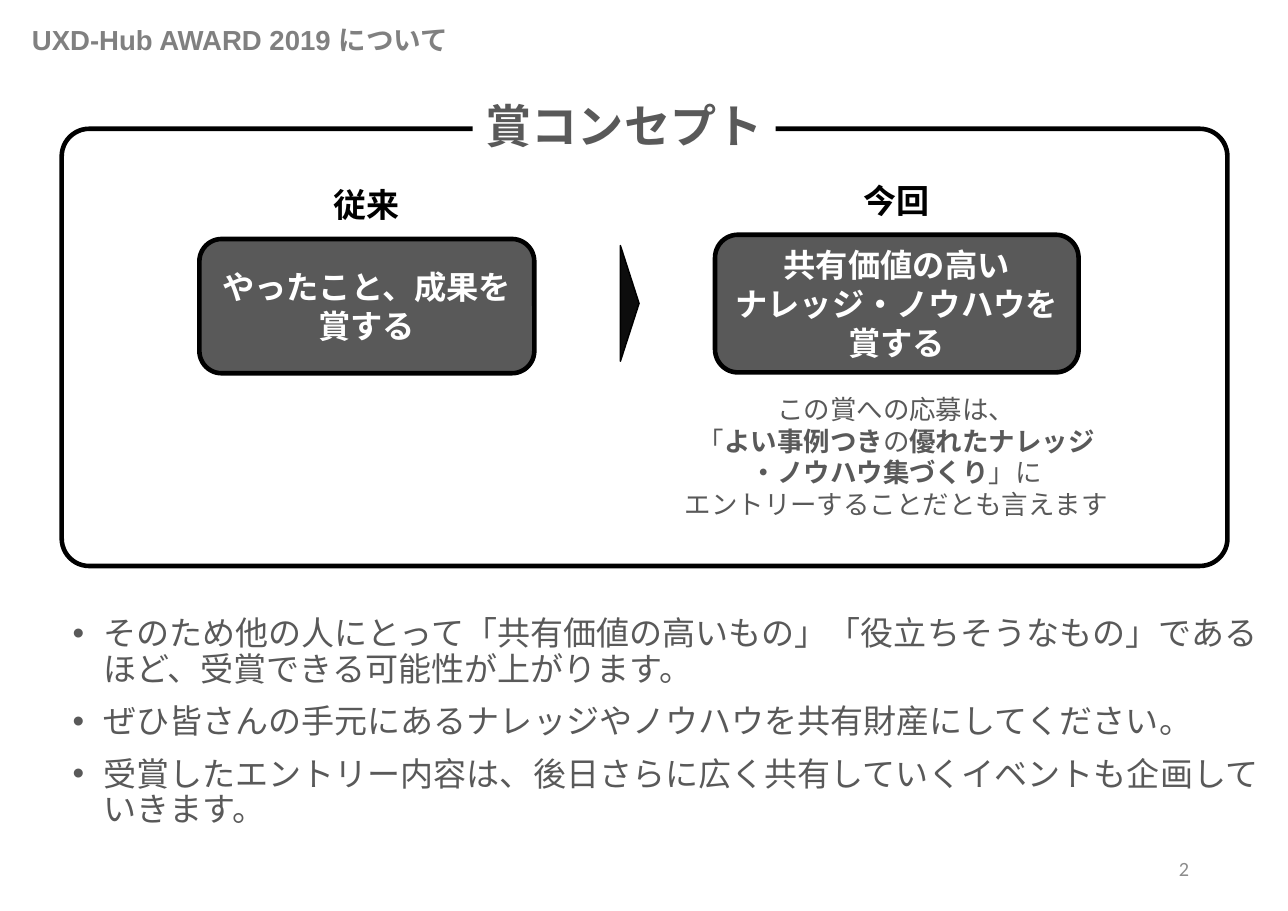
import dataclasses

import pptx
import pptx.dml.color
import pptx.enum.shapes
import pptx.enum.text
import pptx.oxml
import pptx.oxml.ns
import pptx.util

Pt = pptx.util.Pt
SHAPES = pptx.enum.shapes.MSO_SHAPE
ALIGN = pptx.enum.text.PP_ALIGN
ANCHOR = pptx.enum.text.MSO_ANCHOR
FIT = pptx.enum.text.MSO_AUTO_SIZE


@dataclasses.dataclass(frozen=True)
class Theme:
    title_font: str = "Arial"
    font: str = "Calibri"
    grey: str = "808080"
    text: str = "595959"
    number: str = "8C8C8C"
    arrow: str = "0D0D0D"
    black: str = "000000"
    white: str = "FFFFFF"
    title_size: float = 18
    heading_size: float = 30.2
    label_size: float = 21.6
    card_size: float = 21.1
    note_size: float = 17.3
    number_size: float = 13.2


THEME = Theme()
BULLETS = (
    "そのため他の人にとって「共有価値の高いもの」「役立ちそうなもの」であるほど、受賞できる可能性が上がります。",
    "ぜひ皆さんの手元にあるナレッジやノウハウを共有財産にしてください。",
    "受賞したエントリー内容は、後日さらに広く共有していくイベントも企画していきます。",
)
NOTE = (
    ("この賞への応募は、\n「", False),
    ("よい事例つき", True),
    ("の", False),
    ("優れたナレッジ\n・ノウハウ集づくり", True),
    ("」に\nエントリーすることだとも言えます", False),
)


def rgb(color):
    return pptx.dml.color.RGBColor.from_string(color)


def place(shape, left, top, width, height):
    shape.left, shape.top, shape.width, shape.height = map(Pt, (left, top, width, height))


def add_run(paragraph, text, size, color, bold=False, font=THEME.font):
    """Add text to the paragraph, turning each newline into a line break."""
    for index, line in enumerate(text.split("\n")):
        if index:
            paragraph.add_line_break()
        run = paragraph.add_run()
        run.text = line
        run.font.name = font
        run.font.size = Pt(size)
        run.font.bold = bold
        run.font.color.rgb = rgb(color)


def set_frame(frame, anchor=ANCHOR.TOP, wrap=True, inset=None):
    frame.auto_size = FIT.NONE
    frame.word_wrap = wrap
    frame.vertical_anchor = anchor
    if inset is not None:
        frame.margin_left = frame.margin_right = Pt(inset)
        frame.margin_top = frame.margin_bottom = Pt(inset)


def add_text(slide, box, runs, size, color, align=ALIGN.CENTER, **frame_options):
    shape = slide.shapes.add_textbox(*map(Pt, box))
    set_frame(shape.text_frame, **frame_options)
    paragraph = shape.text_frame.paragraphs[0]
    paragraph.alignment = align
    for text, bold in runs:
        add_run(paragraph, text, size, color, bold)
    return shape


def add_outlined(slide, kind, box, fill=None, line_width=3):
    shape = slide.shapes.add_shape(kind, *map(Pt, box))
    shape.shadow.inherit = False
    if fill:
        shape.fill.solid()
        shape.fill.fore_color.rgb = rgb(fill)
    else:
        shape.fill.background()
    shape.line.color.rgb = rgb(THEME.black)
    shape.line.width = Pt(line_width)
    return shape


def add_card(slide, label, text, box):
    """Add a dark rounded card with a label centred above it."""
    card = add_outlined(slide, SHAPES.ROUNDED_RECTANGLE, box, THEME.text)
    set_frame(card.text_frame, ANCHOR.MIDDLE)
    paragraph = card.text_frame.paragraphs[0]
    paragraph.alignment = ALIGN.CENTER
    add_run(paragraph, text, THEME.card_size, THEME.white, True)
    left, top, width, _ = box
    label_box = (left + width / 2 - 22, top - 35.5, 44, 26)
    add_text(slide, label_box, [(label, True)], THEME.label_size, THEME.black,
             wrap=False, inset=0)


def fill_title(title):
    place(title, 20.9, 17.3, 790.6, 19.4)
    set_frame(title.text_frame, ANCHOR.MIDDLE, inset=0)
    paragraph = title.text_frame.paragraphs[0]
    paragraph.alignment = ALIGN.LEFT
    paragraph.line_spacing = 0.9
    add_run(paragraph, "UXD-Hub AWARD 2019 について", THEME.title_size, THEME.grey, True,
            THEME.title_font)


def add_bullet(paragraph):
    properties = paragraph._p.get_or_add_pPr()
    properties.set("marL", str(Pt(20)))
    properties.set("indent", str(-Pt(20)))
    for tag, name, value in (("a:buFont", "typeface", THEME.title_font),
                             ("a:buChar", "char", "•")):
        element = pptx.oxml.parse_xml(f"<{tag} {pptx.oxml.ns.nsdecls('a')}/>")
        element.set(name, value)
        properties.append(element)


def fill_body(body):
    place(body, 40.3, 399.6, 790.6, 147.6)
    frame = body.text_frame
    set_frame(frame)
    for index, text in enumerate(BULLETS):
        paragraph = frame.add_paragraph() if index else frame.paragraphs[0]
        paragraph.line_spacing = 0.9
        paragraph.space_before = Pt(11)
        add_bullet(paragraph)
        add_run(paragraph, text, THEME.label_size, THEME.text)


def main():
    presentation = pptx.Presentation()
    presentation.slide_width, presentation.slide_height = Pt(841.68), Pt(595.44)
    slide = presentation.slides.add_slide(presentation.slide_layouts[1])
    fill_title(slide.shapes.title)
    fill_body(slide.placeholders[1])

    add_text(slide, (594.7, 551.5, 189.4, 31.7), [("2", False)], THEME.number_size,
             THEME.number, ALIGN.RIGHT, anchor=ANCHOR.MIDDLE)
    add_card(slide, "従来", "やったこと、成果を\n賞する", (130.3, 156.2, 218.9, 87.8))
    add_card(slide, "今回", "共有価値の高い\nナレッジ・ノウハウを賞する", (467.3, 153.4, 237.6, 90))
    arrow = add_outlined(slide, SHAPES.ISOSCELES_TRIANGLE, (373.7, 192.2, 75.6, 12.2),
                         THEME.arrow, 1)
    arrow.rotation = 90
    add_text(slide, (409.7, 253.4, 352.1, 90.7), NOTE, THEME.note_size, THEME.text)

    concept = add_outlined(slide, SHAPES.ROUNDED_RECTANGLE, (40.3, 84.2, 761.8, 285.8))
    concept.adjustments[0] = 0.063
    heading = add_text(slide, (308.9, 59.8, 198, 43.9), [("賞コンセプト", True)],
                       THEME.heading_size, THEME.text, wrap=False)
    heading.fill.solid()
    heading.fill.fore_color.rgb = rgb(THEME.white)
    presentation.save("out.pptx")


if __name__ == "__main__":
    main()
